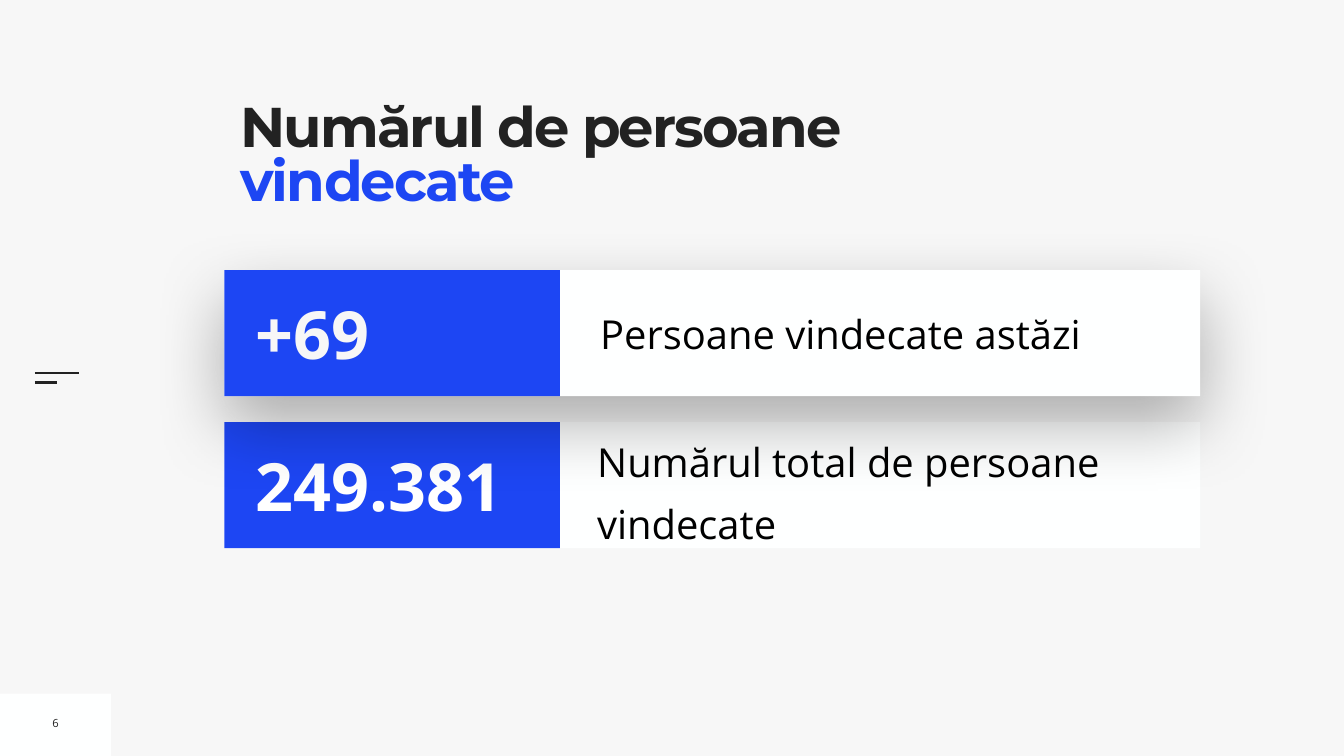
from lxml import etree
from pptx import Presentation
from pptx.dml.color import RGBColor
from pptx.enum.shapes import MSO_CONNECTOR, MSO_SHAPE
from pptx.enum.text import MSO_ANCHOR, MSO_AUTO_SIZE, PP_ALIGN
from pptx.oxml import parse_xml
from pptx.oxml.ns import nsdecls, qn
from pptx.util import Pt

COLORS = {"bg": "F7F7F7", "card": "FEFFFF", "blue": "1D46F3", "dark": "222222",
          "black": "000000", "white": "FFFFFF"}
TITLE = [("Numărul de persoane ", "dark"), ("vindecate", "blue")]
# The total comes first so that the shadow of today's card falls on it.
CARDS = [
    {"row": 1, "value": "249.381", "color": "white", "shadow": False,
     "label": "Numărul total de persoane vindecate",
     "left": 853.2, "inset": 0, "spacing": 1.3, "before": 20},
    {"row": 0, "value": "+69", "color": "bg", "shadow": True,
     "label": "Persoane vindecate astăzi",
     "left": 850.3, "inset": 7.2, "spacing": 1, "before": 0},
]
PAGE = "6"
MARK_LINES = [(533.5, 63.4), (546.5, 31.7)]  # top, length

CARD_LEFT, CARD_TOP, CARD_W, CARD_H, PITCH = 320.4, 386, 1394, 180, 217
VALUE_W = 479.5


def rgb(name):
    return RGBColor.from_string(COLORS[name])


def add_rect(s, x, y, w, h, color):
    sp = s.shapes.add_shape(MSO_SHAPE.RECTANGLE, Pt(x), Pt(y), Pt(w), Pt(h))
    sp.fill.solid()
    sp.fill.fore_color.rgb = rgb(color)
    sp.line.fill.background()
    sp.shadow.inherit = False
    return sp


def add_text(s, x, y, w, h, runs, font, size, bold=False, inset=7.2,
             anchor=MSO_ANCHOR.MIDDLE):
    """Add one paragraph made of (text, color) runs and return it."""
    tf = s.shapes.add_textbox(Pt(x), Pt(y), Pt(w), Pt(h)).text_frame
    tf.word_wrap = True
    tf.auto_size = MSO_AUTO_SIZE.NONE
    tf.vertical_anchor = anchor
    tf.margin_left = tf.margin_right = tf.margin_top = tf.margin_bottom = Pt(inset)
    p = tf.paragraphs[0]
    p.font.name, p.font.size, p.font.bold = font, Pt(size), bold
    for text, color in runs:
        r = p.add_run()
        r.text = text
        r.font.color.rgb = rgb(color)
    return p


def add_shadow(sp):
    effects = sp._element.spPr.find(qn("a:effectLst"))
    effects.append(parse_xml(
        f'<a:outerShdw {nsdecls("a")} blurRad="{Pt(100)}" dist="{Pt(40)}" '
        f'dir="5400000" rotWithShape="0"><a:srgbClr val="{COLORS["black"]}">'
        '<a:alpha val="30000"/></a:srgbClr></a:outerShdw>'))


def add_card(s, card):
    y = CARD_TOP + card["row"] * PITCH
    back = add_rect(s, CARD_LEFT, y, CARD_W, CARD_H, "card")
    if card["shadow"]:
        add_shadow(back)
    add_rect(s, CARD_LEFT, y, VALUE_W, CARD_H, "blue")
    add_text(s, CARD_LEFT + 38.2, y, 434, CARD_H, [(card["value"], card["color"])],
             "Open Sans", 95, bold=True)
    p = add_text(s, card["left"], y, 847, CARD_H, [(card["label"], "black")],
                 "Open Sans", 57, inset=card["inset"])
    p.line_spacing = card["spacing"]
    p.space_before = Pt(card["before"])


def main():
    prs = Presentation()
    prs.slide_width, prs.slide_height = Pt(1920), Pt(1080)
    s = prs.slides.add_slide(prs.slide_layouts[6])
    s.background.fill.solid()
    s.background.fill.fore_color.rgb = rgb("bg")

    add_rect(s, 0, 991, 158.4, 89, "card")
    for y, length in MARK_LINES:
        line = s.shapes.add_connector(MSO_CONNECTOR.STRAIGHT, Pt(49.7), Pt(y),
                                      Pt(49.7 + length), Pt(y))
        line.line.color.rgb = rgb("dark")
        line.line.width = Pt(3)
        etree.SubElement(line._element.spPr, qn("a:effectLst"))

    p = add_text(s, 343.4, 149, 936.7, 196.6, TITLE, "Montserrat", 80, bold=True,
                 inset=0, anchor=MSO_ANCHOR.TOP)
    p.line_spacing = 0.8
    for r in p.runs:
        r.font._element.set("spc", "-270")

    p = add_text(s, 67, 1014.5, 24.5, 36.7, [(PAGE, "dark")], "Open Sans", 16)
    p.alignment = PP_ALIGN.CENTER

    for card in CARDS:
        add_card(s, card)
    prs.save("out.pptx")


if __name__ == "__main__":
    main()
